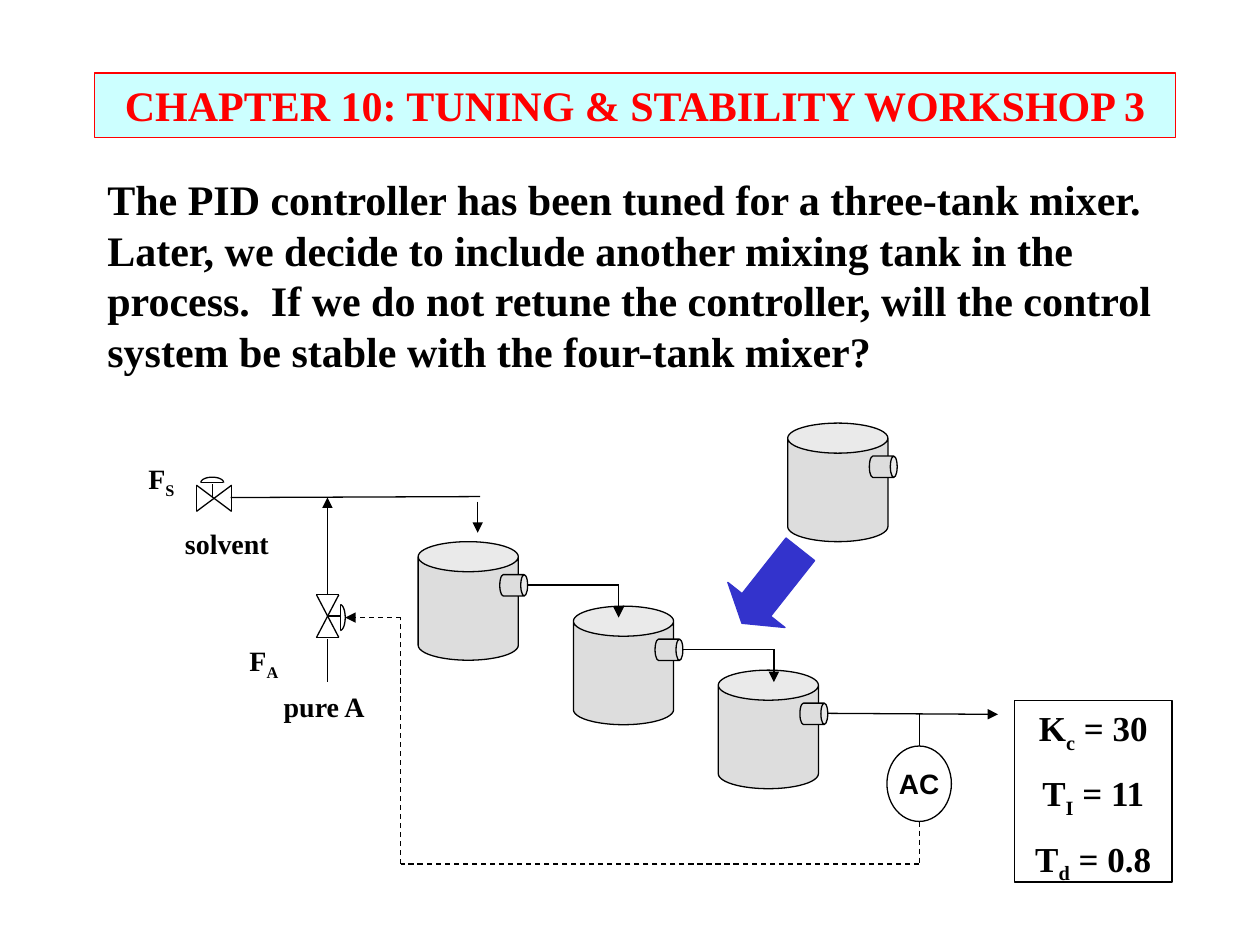
from math import cos, pi, sin

from lxml.etree import SubElement as Sub
from pptx import Presentation
from pptx.dml.color import RGBColor
from pptx.enum.dml import MSO_LINE as Dash
from pptx.enum.shapes import MSO_CONNECTOR as Conn, MSO_SHAPE as Kind
from pptx.enum.text import MSO_ANCHOR as Anchor, MSO_AUTO_SIZE as Auto, PP_ALIGN as Align
from pptx.oxml.ns import qn
from pptx.util import Cm, Pt

SERIF = "Times New Roman"
BLACK = "000000"
GREY = "DDDDDD"
TANKS = [(8.43, 10.92), (11.56, 12.22), (14.48, 13.51), (15.88, 8.53)]
QUESTION = (
    "The PID controller has been tuned for a three-tank mixer.  Later, we decide "
    "to include another mixing tank in the process.  If we do not retune the "
    "controller, will the control system be stable with the four-tank mixer?"
)


def color(text):
    return RGBColor.from_string(text)


def paint(shape, fill=None, edge=BLACK):
    if fill:
        shape.fill.solid()
        shape.fill.fore_color.rgb = color(fill)
    else:
        shape.fill.background()
    shape.line.color.rgb = color(edge)
    shape.line.width = Pt(0.75)


def style(run, size, tint=BLACK, font=SERIF):
    run.font.name = font
    run.font.size = Pt(size)
    run.font.bold = True
    run.font.color.rgb = color(tint)


def place(shape, x, y, w, h):
    shape.left, shape.top, shape.width, shape.height = Cm(x), Cm(y), Cm(w), Cm(h)


def fill_holder(shape, text, box, tint, align, anchor):
    place(shape, *box)
    frame = shape.text_frame
    frame.text = text
    frame.auto_size = Auto.NONE
    frame.vertical_anchor = anchor
    para = frame.paragraphs[0]
    para.alignment = align
    para.space_before = Pt(0)
    para.line_spacing = Pt(28.8)
    style(para.runs[0], 24, tint)
    return para


def add_shape(slide, kind, x, y, w, h, fill=None, edge=BLACK):
    shape = slide.shapes.add_shape(kind, Cm(x), Cm(y), Cm(w), Cm(h))
    shape.shadow.inherit = False
    paint(shape, fill, edge)
    return shape


def add_line(slide, x1, y1, x2, y2, arrow=False, dash=False):
    line = slide.shapes.add_connector(Conn.STRAIGHT, Cm(x1), Cm(y1), Cm(x2), Cm(y2))
    line.line.color.rgb = color(BLACK)
    line.line.width = Pt(0.75)
    if dash:
        line.line.dash_style = Dash.DASH
    if arrow:
        Sub(line.line._get_or_add_ln(), qn("a:tailEnd"), type="triangle")
    Sub(line._element.spPr, qn("a:effectLst"))


def add_path(slide, spots, arrow=False, dash=False):
    for i, (start, end) in enumerate(zip(spots, spots[1:]), 2):
        add_line(slide, *start, *end, arrow=arrow and i == len(spots), dash=dash)


def add_tank(slide, x, y):
    tank = add_shape(slide, Kind.CAN, x, y, 2.02, 2.39, GREY)
    tank.adjustments[0] = 0.3
    spout = add_shape(slide, Kind.CAN, x + 1.71, y + 0.6, 0.43, 0.56, GREY)
    spout.adjustments[0] = 0.32
    spout.rotation = 90


def add_pipe(slide, x, y):
    x, y = x + 2.21, y + 0.87
    add_path(slide, [(x, y), (x + 1.83, y), (x + 1.83, y + 0.66)], arrow=True)


def add_dome(slide, x, y, rx, ry, start):
    turns = [start + pi * i / 16 for i in range(17)]
    spots = [(Cm(x + rx * cos(t)), Cm(y + ry * sin(t))) for t in turns]
    pen = slide.shapes.build_freeform(*spots[0])
    pen.add_line_segments(spots[1:], close=False)
    dome = pen.convert_to_shape()
    dome.shadow.inherit = False
    paint(dome)


def add_valve(slide, x1, y1, x2, y2, flat):
    if flat:
        spots = [(x1, y1), (x1, y2), (x2, y1), (x2, y2), (x1, y1)]
    else:
        spots = [(x1, y1), (x2, y1), (x1, y2), (x2, y2), (x1, y1)]
    add_path(slide, spots)


def write(para, parts, size):
    para.text = "".join(parts)
    para.text = ""
    for i, part in enumerate(parts):
        run = para.add_run()
        run.text = part
        style(run, size)
        if i == 1:
            run._r.get_or_add_rPr().set("baseline", "-25000")


def add_label(slide, x, y, w, *parts):
    box = slide.shapes.add_textbox(Cm(x), Cm(y), Cm(w), Cm(0.94))
    box.text_frame.word_wrap = True
    write(box.text_frame.paragraphs[0], parts, 16)


def add_tuning(slide):
    box = add_shape(slide, Kind.RECTANGLE, 20.45, 14.12, 3.18, 3.66)
    frame = box.text_frame
    frame.vertical_anchor = Anchor.TOP
    rows = [("K", "c", " = 30"), ("T", "I", " = 11"), ("T", "d", " = 0.8")]
    for i, row in enumerate(rows):
        para = frame.add_paragraph() if i else frame.paragraphs[0]
        para.alignment = Align.CENTER
        para.space_before = Pt(10 if i else 0)
        write(para, row, 20)


def add_meter(slide):
    meter = add_shape(slide, Kind.OVAL, 17.88, 15.04, 1.3, 1.52)
    frame = meter.text_frame
    frame.text = "AC"
    frame.word_wrap = False
    frame.vertical_anchor = Anchor.MIDDLE
    frame.paragraphs[0].alignment = Align.CENTER
    style(frame.paragraphs[0].runs[0], 16, font="Arial")
    add_line(slide, 18.53, 15.04, 18.53, 14.38)
    loop = [(18.53, 16.56), (18.53, 17.42), (8.08, 17.42), (8.08, 12.45), (6.96, 12.45)]
    add_path(slide, loop, arrow=True, dash=True)


def add_feed(slide):
    add_line(slide, 4.65, 10.03, 9.68, 10.01)
    add_line(slide, 9.63, 10.11, 9.63, 10.74, arrow=True)
    add_line(slide, 6.6, 11.99, 6.6, 10.03, arrow=True)
    add_line(slide, 6.6, 12.88, 6.6, 13.74)
    add_valve(slide, 3.96, 9.78, 4.67, 10.31, True)
    add_line(slide, 4.29, 10.03, 4.29, 9.75)
    add_line(slide, 4.06, 9.73, 4.5, 9.73)
    add_dome(slide, 4.28, 9.73, 0.23, 0.11, pi)
    add_valve(slide, 6.38, 11.99, 6.83, 12.85, False)
    add_line(slide, 6.6, 12.42, 6.86, 12.42)
    add_line(slide, 6.86, 12.7, 6.86, 12.19)
    add_dome(slide, 6.86, 12.45, 0.1, 0.26, -pi / 2)


def main():
    deck = Presentation()
    deck.slide_width, deck.slide_height = Cm(25.4), Cm(19.05)
    slide = deck.slides.add_slide(deck.slide_layouts[1])
    title, body = slide.placeholders
    fill_holder(title, "CHAPTER 10: TUNING & STABILITY WORKSHOP 3",
                (1.91, 1.47, 21.79, 1.3), "FF0000", Align.CENTER, Anchor.MIDDLE)
    paint(title, "CCFFFF", "FF0000")
    para = fill_holder(body, QUESTION, (1.91, 3.38, 21.79, 4.32),
                       BLACK, Align.LEFT, Anchor.TOP)
    props = para._p.get_or_add_pPr()
    props.set("marL", "0")
    props.set("indent", "0")
    Sub(props, qn("a:buNone"))

    for spot in TANKS:
        add_tank(slide, *spot)
    for spot in TANKS[:2]:
        add_pipe(slide, *spot)
    add_line(slide, 16.69, 14.38, 20.12, 14.4, arrow=True)
    add_feed(slide)
    add_meter(slide)
    add_label(slide, 3.48, 10.49, 2.4, "solvent")
    add_label(slide, 5.47, 13.77, 2.34, "pure A")
    add_label(slide, 2.74, 9.17, 1.65, "F", "S")
    add_label(slide, 4.78, 12.85, 1.3, "F", "A")
    arrow = add_shape(slide, Kind.DOWN_ARROW, 14.81, 10.87, 1.47, 1.9, "3333CC", "3333CC")
    arrow.adjustments[1] = 0.32
    arrow.rotation = 38.3
    add_tuning(slide)
    deck.save("out.pptx")


if __name__ == "__main__":
    main()
